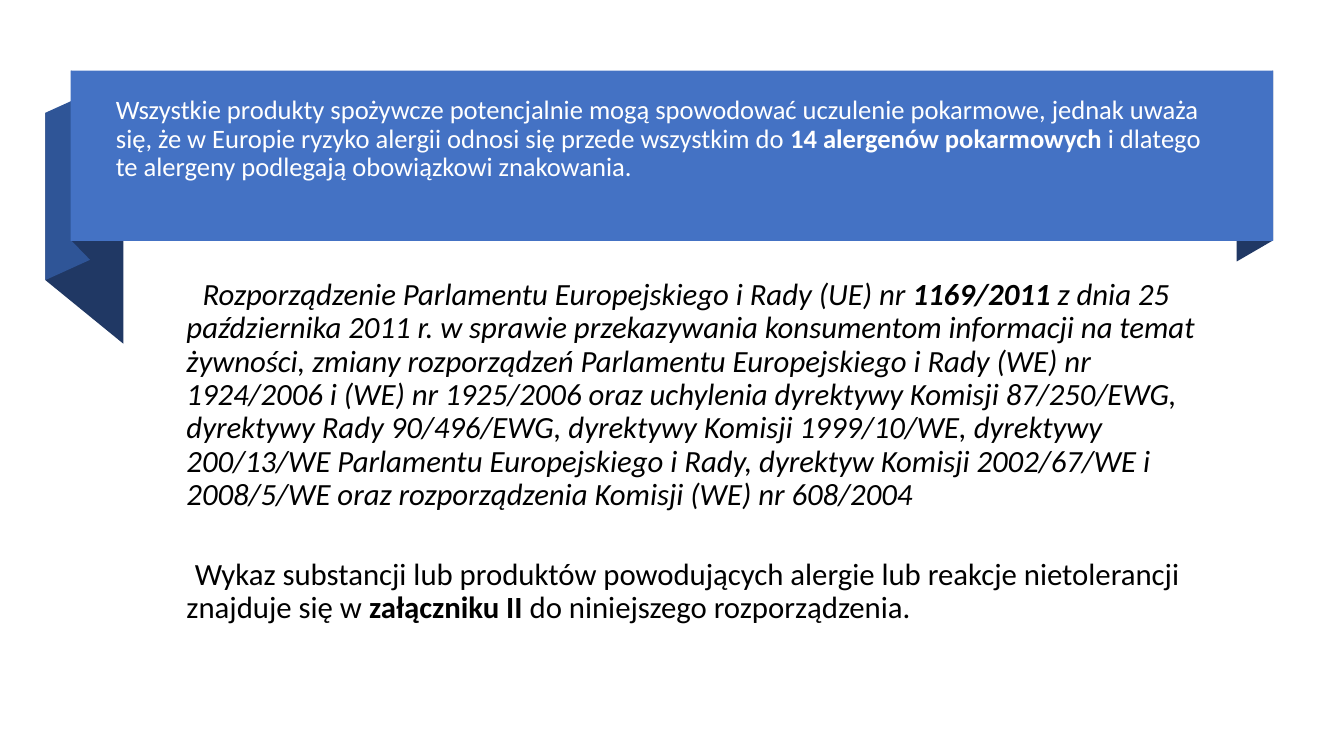
"""Build a slide on food allergens with a folded ribbon heading."""
from pptx import Presentation
from pptx.dml.color import RGBColor
from pptx.enum import shapes, text
from pptx.oxml import xmlchemy
from pptx.util import Pt

WHITE = RGBColor(0xFF, 0xFF, 0xFF)
BLACK = RGBColor(0x00, 0x00, 0x00)
BLUE = RGBColor(0x44, 0x72, 0xC4)
MID_BLUE = RGBColor(0x2F, 0x55, 0x97)
DARK_BLUE = RGBColor(0x20, 0x38, 0x64)

HEADING = [
    ("Wszystkie produkty spożywcze potencjalnie mogą spowodować uczulenie pokarmowe, "
     "jednak uważa się, że w Europie ryzyko alergii odnosi się przede wszystkim do ", False),
    ("14 alergenów pokarmowych", True),
    (" i dlatego te alergeny podlegają obowiązkowi znakowania.", False),
]
REGULATION = [
    ("Rozporządzenie Parlamentu Europejskiego i Rady (UE) nr ", False),
    ("1169/2011 ", True),
    ("z dnia 25 października 2011 r. w sprawie przekazywania konsumentom informacji na "
     "temat żywności, zmiany rozporządzeń Parlamentu Europejskiego i Rady (WE) nr 1924/2006 "
     "i (WE) nr 1925/2006 oraz uchylenia dyrektywy Komisji 87/250/EWG, dyrektywy Rady "
     "90/496/EWG, dyrektywy Komisji 1999/10/WE, dyrektywy 200/13/WE Parlamentu Europejskiego "
     "i Rady, dyrektyw Komisji 2002/67/WE i 2008/5/WE oraz rozporządzenia Komisji (WE) nr "
     "608/2004", False),
]
ANNEX = [
    ("Wykaz substancji lub produktów powodujących alergie lub reakcje nietolerancji "
     "znajduje się w ", False),
    ("załączniku II", True),
    (" do niniejszego rozporządzenia.", False),
]

# left, right, top at left, top at right, height, colour
FOLDS = [
    (32.4, 88.1, 80.6, 126, 119.5, DARK_BLUE),
    (32.4, 64.2, 80.6, 66.2, 119.5, MID_BLUE),
    (51, 64.2, 50.4, 64, 121.3, DARK_BLUE),
    (883.4, 909.4, 65.5, 50.4, 121.3, DARK_BLUE),
]
BANNER = (50.4, 50.4, 859, 121.7)
TITLE_BOX = (75.6, 63.4, 808.6, 95.8)
BODY_BOX = (108, 195.8, 764.6, 280.8)

TITLE_FONT = {"name": "Calibri", "size": Pt(19)}
BODY_FONT = {"name": "Calibri", "size": Pt(22)}
# runs, italic, first-line indent, space before
BODY = [(REGULATION, True, 11.5, 0), (ANNEX, False, 6, 33.5)]
LEFT_MARGIN = 18


def paint(shape, colour):
    """Give a shape a flat fill without outline or shadow."""
    shape.shadow.inherit = False
    shape.fill.solid()
    shape.fill.fore_color.rgb = colour
    shape.line.fill.background()


def add_fold(page, left, right, left_top, right_top, height, colour):
    """Draw one slanted side of the ribbon."""
    corners = [(right, right_top), (right, right_top + height), (left, left_top + height)]
    builder = page.shapes.build_freeform(Pt(left), Pt(left_top))
    builder.add_line_segments([(Pt(x), Pt(y)) for x, y in corners], close=True)
    paint(builder.convert_to_shape(), colour)


def place(page, box, bounds, top_inset):
    """Move a placeholder to its bounds, in front of the ribbon."""
    box.left, box.top, box.width, box.height = map(Pt, bounds)
    settings = {"word_wrap": True, "auto_size": text.MSO_AUTO_SIZE.NONE,
                "vertical_anchor": text.MSO_ANCHOR.TOP, "margin_top": Pt(top_inset)}
    for key, value in settings.items():
        setattr(box.text_frame, key, value)
    page.shapes._spTree.append(box._element)


def write(para, runs, font, colour, italic=False, before=0):
    """Fill a paragraph with plain and bold runs."""
    settings = {"alignment": text.PP_ALIGN.LEFT, "line_spacing": 0.9,
                "space_before": Pt(before), "space_after": Pt(0)}
    for key, value in settings.items():
        setattr(para, key, value)
    for words, bold in runs:
        span = para.add_run()
        span.text = words
        for key, value in {**font, "bold": bold, "italic": italic}.items():
            setattr(span.font, key, value)
        span.font.color.rgb = colour


def indent(para, first_line):
    """Set the indents of a paragraph and drop its bullet."""
    properties = para._p.get_or_add_pPr()
    properties.set("marL", str(Pt(LEFT_MARGIN)))
    properties.set("indent", str(Pt(first_line)))
    properties.append(xmlchemy.OxmlElement("a:buNone"))


def main():
    """Assemble and save the slide."""
    deck = Presentation()
    deck.slide_width, deck.slide_height = Pt(960), Pt(540)
    page = deck.slides.add_slide(deck.slide_layouts[1])
    title, body = page.shapes.title, page.placeholders[1]

    for fold in FOLDS:
        add_fold(page, *fold)
    banner = page.shapes.add_shape(shapes.MSO_SHAPE.RECTANGLE, *map(Pt, BANNER))
    paint(banner, BLUE)

    place(page, title, TITLE_BOX, 5.5)
    write(title.text_frame.paragraphs[0], HEADING, TITLE_FONT, WHITE)

    place(page, body, BODY_BOX, 3.6)
    for number, (runs, italic, first_line, before) in enumerate(BODY):
        frame = body.text_frame
        para = frame.add_paragraph() if number else frame.paragraphs[0]
        write(para, runs, BODY_FONT, BLACK, italic, before)
        indent(para, first_line)

    deck.save("out.pptx")


if __name__ == "__main__":
    main()
